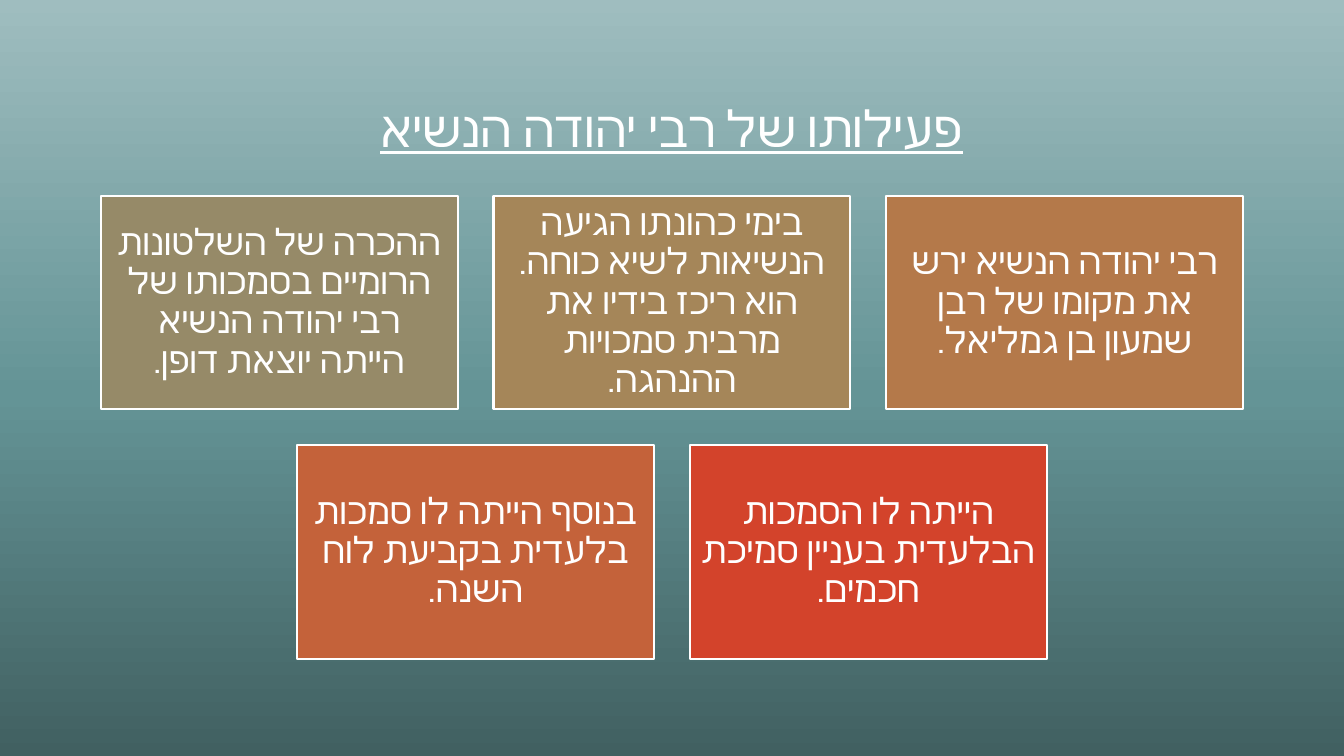
import copy
import pptx
import pptx.util
import pptx.dml.color
import pptx.enum.text
import pptx.enum.shapes
import pptx.oxml.ns
import lxml.etree

# Content: rows of cards, read from right to left
TITLE = "פעילותו של רבי יהודה הנשיא"
ROWS = [
    [("רבי יהודה הנשיא ירש את מקומו של רבן שמעון בן גמליאל.", "clay"),
     ("בימי כהונתו הגיעה הנשיאות לשיא כוחה. הוא ריכז בידיו את מרבית סמכויות ההנהגה.", "sand"),
     ("ההכרה של השלטונות הרומיים בסמכותו של רבי יהודה הנשיא הייתה יוצאת דופן.", "olive")],
    [("הייתה לו הסמכות הבלעדית בעניין סמיכת חכמים.", "red"),
     ("בנוסף הייתה לו סמכות בלעדית בקביעת לוח השנה.", "rust")],
]
COLORS = {
    "white": "FFFFFF", "olive": "968A68", "sand": "A58659", "clay": "B4794A",
    "rust": "C4623A", "red": "D3432B",
    "deep": "416061", "teal": "649496", "pale": "9FBDBF",
}
STOPS = [(0, "deep"), (0.48, "teal"), (1, "pale")]
HEBREW = "Cabin"

# Sizes in inches
WIDE, HIGH = 13.33, 7.5
CARD_W, CARD_H, GAP, TOP = 3.54, 2.12, 0.355, 1.94

Inches = pptx.util.Inches
Pt = pptx.util.Pt
qn = pptx.oxml.ns.qn


def color(name):
    return pptx.dml.color.RGBColor.from_string(COLORS[name])


def write(shape, text, font, size, space, anchor, pad_x, pad_y):
    """Put one centred right-to-left paragraph in a shape."""
    frame = shape.text_frame
    frame.text = text
    frame.word_wrap = True
    frame.vertical_anchor = anchor
    frame.margin_left = frame.margin_right = Inches(pad_x)
    frame.margin_top = frame.margin_bottom = Inches(pad_y)
    para = frame.paragraphs[0]
    para.alignment = pptx.enum.text.PP_ALIGN.CENTER
    para.line_spacing = space
    para._p.get_or_add_pPr().set("rtl", "1")
    run = para.runs[0]
    run.font.size = Pt(size)
    run.font.color.rgb = color("white")
    run.font.name = font
    # Hebrew uses the complex-script font
    script = lxml.etree.SubElement(run._r.get_or_add_rPr(), qn("a:cs"))
    script.set("typeface", HEBREW)
    return run


def paint(slide):
    """Fill the background, dark at the bottom and pale at the top."""
    fill = slide.background.fill
    fill.gradient()
    fill.gradient_angle = 90
    first = fill.gradient_stops[0]._gs
    first.addnext(copy.deepcopy(first))
    for stop, (place, name) in zip(fill.gradient_stops, STOPS):
        stop.position = place
        stop.color.rgb = color(name)


def main():
    deck = pptx.Presentation()
    deck.slide_width, deck.slide_height = Inches(WIDE), Inches(HIGH)
    slide = deck.slides.add_slide(deck.slide_layouts[6])
    paint(slide)
    anchors = pptx.enum.text.MSO_ANCHOR

    # Title
    title = slide.shapes.add_textbox(
        Inches(1.66), Inches(0.21), Inches(10), Inches(1.42))
    run = write(title, TITLE, "Cabin", 36, 0.8, anchors.BOTTOM, 0.13, 0.07)
    run.font.underline = True

    # Cards, each row centred on the slide
    for level, row in enumerate(ROWS):
        span = len(row) * (CARD_W + GAP) - GAP
        right = (WIDE + span) / 2
        top = TOP + level * (CARD_H + GAP)
        for spot, (text, tint) in enumerate(row):
            left = right - CARD_W - spot * (CARD_W + GAP)
            card = slide.shapes.add_shape(
                pptx.enum.shapes.MSO_SHAPE.RECTANGLE,
                Inches(left), Inches(top), Inches(CARD_W), Inches(CARD_H))
            card.shadow.inherit = False
            card.fill.solid()
            card.fill.fore_color.rgb = color(tint)
            card.line.color.rgb = color("white")
            card.line.width = Pt(1.5)
            write(card, text, "Cambria", 26, 0.9, anchors.MIDDLE, 0.11, 0.11)

    deck.save("out.pptx")


if __name__ == "__main__":
    main()
